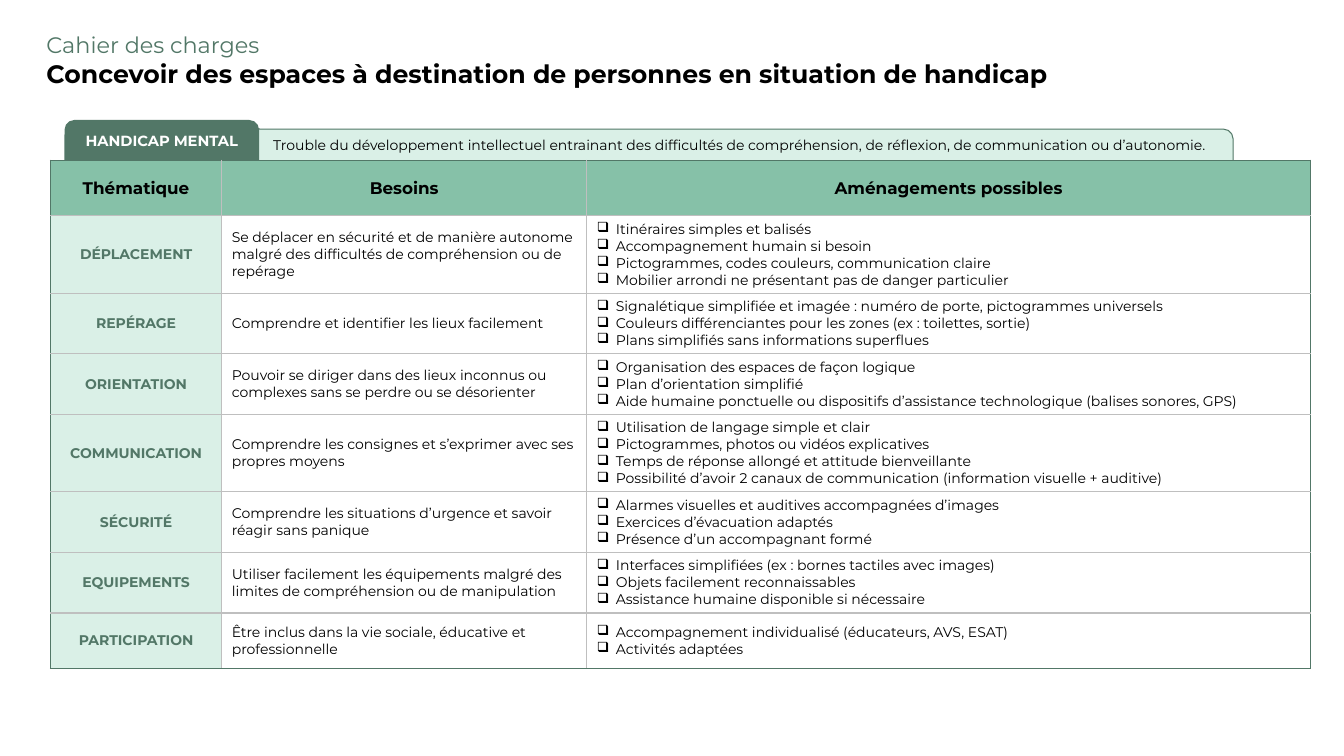
from dataclasses import dataclass

from lxml import etree
from pptx import Presentation
from pptx.dml.color import RGBColor
from pptx.enum.shapes import MSO_SHAPE
from pptx.enum.text import MSO_ANCHOR, MSO_AUTO_SIZE, PP_ALIGN
from pptx.oxml.ns import qn
from pptx.util import Emu, Inches, Pt

LEFT, CENTER = PP_ALIGN.LEFT, PP_ALIGN.CENTER
TOP, MIDDLE = MSO_ANCHOR.TOP, MSO_ANCHOR.MIDDLE
ROUNDED = MSO_SHAPE.ROUNDED_RECTANGLE
FIT_SHAPE = MSO_AUTO_SIZE.SHAPE_TO_FIT_TEXT
TITLE_ONLY = 5

FONT = "Montserrat"
BLACK, WHITE, GREY = "000000", "FFFFFF", "BFBFBF"
DARK, MEDIUM, PALE = "527767", "86C1A8", "DAF0E7"

# The slide is a grid of 100 columns by 100 rows.
SLIDE_W, SLIDE_H = Inches(13.33), Inches(7.5)
TABLE_LEFT, TABLE_TOP = 3.75, 21.2
TABLE_COLS = (12.75, 27.16, 53.86)
MIN_ROW, TEXT_LINE, ROW_PADDING = 7.33, 2.23, 1.33
BULLET_INDENT = 1.42


@dataclass(frozen=True)
class Box:
    left: float
    top: float
    width: float
    height: float


@dataclass(frozen=True)
class Style:
    size: float
    color: str = BLACK
    bold: bool = False
    align: PP_ALIGN = LEFT


@dataclass(frozen=True)
class Tab:
    box: Box
    text: str
    style: Style
    fill: str
    anchor: MSO_ANCHOR
    line: str = ""
    margin_left: float = 0.75
    margin_bottom: float = 0.67


@dataclass(frozen=True)
class Theme:
    name: str
    need: str
    solutions: tuple[str, ...]


TITLE_BOX = Box(2.7, 3.47, 76.74, 8.93)
TITLE = (
    ("Cahier des charges", Style(16, DARK)),
    ("Concevoir des espaces à destination de personnes en situation de handicap",
     Style(18, bold=True)),
)
TABS = (
    Tab(Box(18.08, 17.07, 73.67, 7.87),
        "Trouble du développement intellectuel entrainant des difficultés de "
        "compréhension, de réflexion, de communication ou d’autonomie.",
        Style(10), PALE, TOP, line=DARK, margin_left=2.03),
    Tab(Box(4.8, 15.87, 14.48, 7.87), "HANDICAP MENTAL",
        Style(10.5, WHITE, True, CENTER), DARK, MIDDLE, margin_bottom=2.93),
)
HEADERS = ("Thématique", "Besoins", "Aménagements possibles")
HEADER_STYLE = Style(12, bold=True, align=CENTER)
NAME_STYLE = Style(10, DARK, True, CENTER)
BODY_STYLE = Style(10)
THEMES = (
    Theme("DÉPLACEMENT",
          "Se déplacer en sécurité et de manière autonome malgré des difficultés "
          "de compréhension ou de repérage",
          ("Itinéraires simples et balisés",
           "Accompagnement humain si besoin",
           "Pictogrammes, codes couleurs, communication claire",
           "Mobilier arrondi ne présentant pas de danger particulier")),
    Theme("REPÉRAGE",
          "Comprendre et identifier les lieux facilement",
          ("Signalétique simplifiée et imagée : numéro de porte, pictogrammes universels",
           "Couleurs différenciantes pour les zones (ex : toilettes, sortie)",
           "Plans simplifiés sans informations superflues")),
    Theme("ORIENTATION",
          "Pouvoir se diriger dans des lieux inconnus ou complexes sans se perdre "
          "ou se désorienter",
          ("Organisation des espaces de façon logique",
           "Plan d’orientation simplifié",
           "Aide humaine ponctuelle ou dispositifs d’assistance technologique "
           "(balises sonores, GPS)")),
    Theme("COMMUNICATION",
          "Comprendre les consignes et s’exprimer avec ses propres moyens",
          ("Utilisation de langage simple et clair",
           "Pictogrammes, photos ou vidéos explicatives",
           "Temps de réponse allongé et attitude bienveillante",
           "Possibilité d’avoir 2 canaux de communication "
           "(information visuelle + auditive)")),
    Theme("SÉCURITÉ",
          "Comprendre les situations d’urgence et savoir réagir sans panique",
          ("Alarmes visuelles et auditives accompagnées d’images",
           "Exercices d’évacuation adaptés",
           "Présence d’un accompagnant formé")),
    Theme("EQUIPEMENTS",
          "Utiliser facilement les équipements malgré des limites de compréhension "
          "ou de manipulation",
          ("Interfaces simplifiées (ex : bornes tactiles avec images)",
           "Objets facilement reconnaissables",
           "Assistance humaine disponible si nécessaire")),
    Theme("PARTICIPATION",
          "Être inclus dans la vie sociale, éducative et professionnelle",
          ("Accompagnement individualisé (éducateurs, AVS, ESAT)",
           "Activités adaptées")),
)


def rgb(color: str) -> RGBColor:
    return RGBColor.from_string(color)


def across(cols: float) -> Emu:
    return Emu(round(SLIDE_W * cols / 100))


def down(rows: float) -> Emu:
    return Emu(round(SLIDE_H * rows / 100))


def place(box: Box) -> tuple[Emu, Emu, Emu, Emu]:
    return across(box.left), down(box.top), across(box.width), down(box.height)


def format_paragraph(p, style: Style) -> None:
    p.alignment = style.align
    for r in p.runs:
        r.font.name, r.font.size, r.font.bold = FONT, Pt(style.size), style.bold
        r.font.color.rgb = rgb(style.color)


def add_title(s) -> None:
    title = s.shapes.title
    title.left, title.top, title.width, title.height = place(TITLE_BOX)
    tf = title.text_frame
    tf.text = "\n".join(text for text, _ in TITLE)
    tf.word_wrap, tf.auto_size, tf.vertical_anchor = False, FIT_SHAPE, TOP
    for p, (_, style) in zip(tf.paragraphs, TITLE):
        format_paragraph(p, style)
        p.line_spacing, p.space_before = 1.0, Pt(0)


def add_tab(s, tab: Tab) -> None:
    sp = s.shapes.add_shape(ROUNDED, *place(tab.box))
    sp.shadow.inherit = False
    sp.fill.solid()
    sp.fill.fore_color.rgb = rgb(tab.fill)
    if tab.line:
        sp.line.color.rgb, sp.line.width = rgb(tab.line), Pt(0.75)
    else:
        sp.line.fill.background()
    tf = sp.text_frame
    tf.text, tf.word_wrap, tf.vertical_anchor = tab.text, True, tab.anchor
    tf.margin_left, tf.margin_bottom = across(tab.margin_left), down(tab.margin_bottom)
    format_paragraph(tf.paragraphs[0], tab.style)


def set_borders(cell, colors: dict[str, str]) -> None:
    """Draw 1 pt borders; colors maps L, R, T and B, in that order, to hex."""
    for i, (side, color) in enumerate(colors.items()):
        ln = etree.Element(qn(f"a:ln{side}"), w=str(Pt(1)))
        fill = etree.SubElement(ln, qn("a:solidFill"))
        etree.SubElement(fill, qn("a:srgbClr"), val=color)
        cell._tc.get_or_add_tcPr().insert(i, ln)


def add_bullet(p) -> None:
    indent = across(BULLET_INDENT)
    pPr = p._p.get_or_add_pPr()
    pPr.set("marL", str(indent))
    pPr.set("indent", str(-indent))
    etree.SubElement(pPr, qn("a:buChar"), char="❑")


def fill_cell(cell, text: str, style: Style, fill: str = "") -> None:
    cell.text_frame.text, cell.vertical_anchor = text, MIDDLE
    if fill:
        cell.fill.solid()
        cell.fill.fore_color.rgb = rgb(fill)
    else:
        cell.fill.background()
    for p in cell.text_frame.paragraphs:
        format_paragraph(p, style)


def add_needs_table(s) -> None:
    heights = [MIN_ROW] + [max(MIN_ROW, ROW_PADDING + TEXT_LINE * len(t.solutions))
                           for t in THEMES]
    box = Box(TABLE_LEFT, TABLE_TOP, sum(TABLE_COLS), sum(heights))
    table = s.shapes.add_table(len(heights), len(TABLE_COLS), *place(box)).table
    table.first_row = table.horz_banding = False
    for column, width in zip(table.columns, TABLE_COLS):
        column.width = across(width)
    for row, height in zip(table.rows, heights):
        row.height = down(height)
    for col, header in enumerate(HEADERS):
        fill_cell(table.cell(0, col), header, HEADER_STYLE, MEDIUM)
    for row, theme in enumerate(THEMES, 1):
        name, need, solutions = table.rows[row].cells
        fill_cell(name, theme.name, NAME_STYLE, PALE)
        fill_cell(need, theme.need, BODY_STYLE)
        fill_cell(solutions, "\n".join(theme.solutions), BODY_STYLE)
        for p in solutions.text_frame.paragraphs:
            add_bullet(p)
    last_row, last_col = len(heights) - 1, len(TABLE_COLS) - 1
    for row in range(last_row + 1):
        for col in range(last_col + 1):
            outer = {"L": col == 0, "R": col == last_col,
                     "T": row == 0, "B": row == last_row}
            set_borders(table.cell(row, col),
                        {side: DARK if edge else GREY for side, edge in outer.items()})


def main() -> None:
    prs = Presentation()
    prs.slide_width, prs.slide_height = SLIDE_W, SLIDE_H
    s = prs.slides.add_slide(prs.slide_layouts[TITLE_ONLY])
    add_title(s)
    for tab in TABS:
        add_tab(s, tab)
    add_needs_table(s)
    prs.save("out.pptx")


if __name__ == "__main__":
    main()
